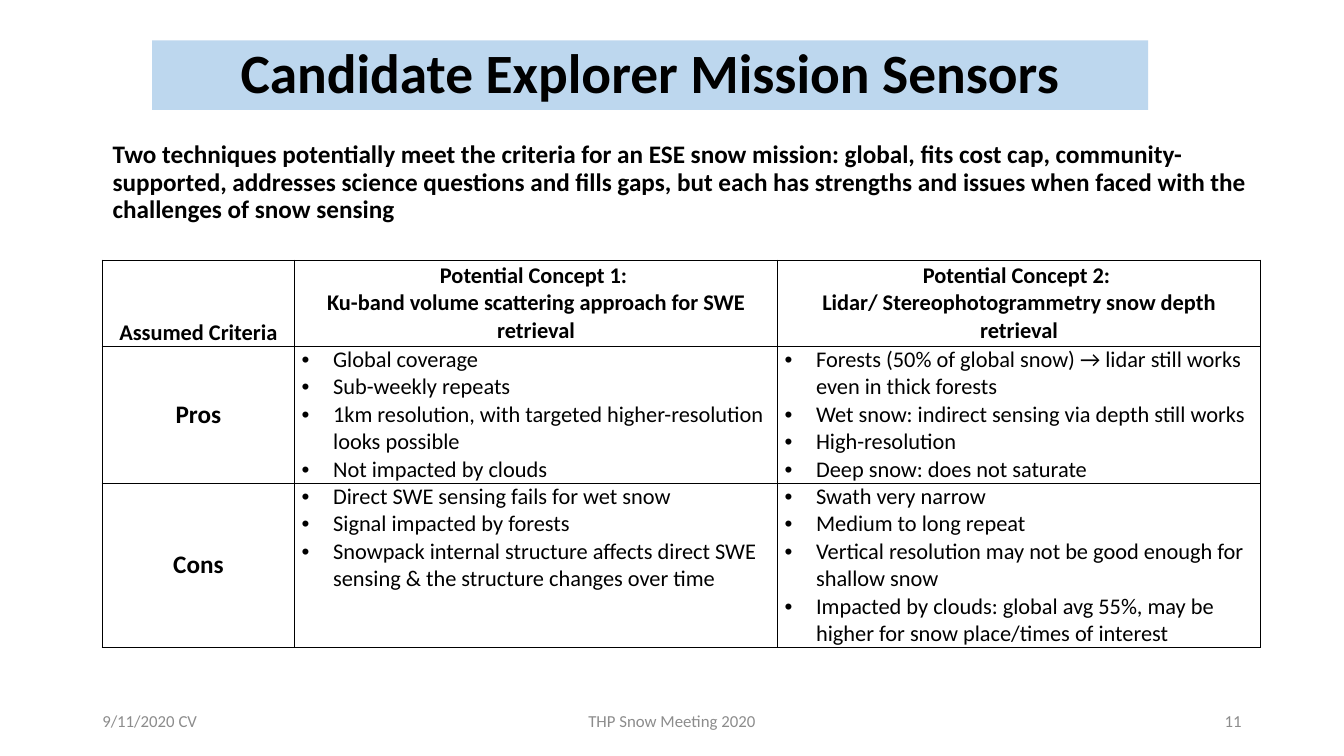
import pptx
import pptx.dml.color
import pptx.enum.shapes
import pptx.enum.text
import pptx.util
from lxml import etree

Pt = pptx.util.Pt
ALIGN = pptx.enum.text.PP_ALIGN
ANCHOR = pptx.enum.text.MSO_ANCHOR

TITLE = "Candidate Explorer Mission Sensors"
INTRO = (
    "Two techniques potentially meet the criteria for an ESE snow mission: global, "
    "fits cost cap, community-supported, addresses science questions and fills gaps, "
    "but each has strengths and issues when faced with the challenges of snow sensing"
)
HEADERS = [
    ["Assumed Criteria"],
    ["Potential Concept 1: ", "Ku-band volume scattering approach for SWE retrieval"],
    ["Potential Concept 2: ", "Lidar/ Stereophotogrammetry snow depth retrieval"],
]
CRITERIA = [
    ("Pros",
     ["Global coverage",
      "Sub-weekly repeats",
      "1km resolution, with targeted higher-resolution looks possible",
      "Not impacted by clouds"],
     ["Forests (50% of global snow) → lidar still works even in thick forests",
      "Wet snow: indirect sensing via depth still works",
      "High-resolution",
      "Deep snow: does not saturate"]),
    ("Cons",
     ["Direct SWE sensing fails for wet snow",
      "Signal impacted by forests",
      "Snowpack internal structure affects direct SWE sensing & the structure "
      "changes over time"],
     ["Swath very narrow",
      "Medium to long repeat",
      "Vertical resolution may not be good enough for shallow snow",
      "Impacted by clouds: global avg 55%, may be higher for snow place/times of interest"]),
]
# text, left, width, alignment
FOOTERS = [
    ("9/11/2020 CV", 66, 216, ALIGN.LEFT),
    ("THP Snow Meeting 2020", 318, 324, ALIGN.CENTER),
    ("11", 678, 216, ALIGN.RIGHT),
]
COL_WIDTHS = [137.5, 345, 345]
ROW_HEIGHTS = [61.5, 97.8, 117.2]
BULLET_INDENT = Pt(22.5)


def rgb(hex_color):
    return pptx.dml.color.RGBColor.from_string(hex_color)


def fill(obj, hex_color):
    obj.fill.solid()
    obj.fill.fore_color.rgb = rgb(hex_color)


def write(tf, lines, size, bold=False, align=ALIGN.LEFT, color="000000",
          anchor=ANCHOR.MIDDLE, spacing=None, bullets=False):
    """Put lines into a text frame, one paragraph each."""
    tf.word_wrap = True
    tf.vertical_anchor = anchor
    for i, line in enumerate(lines):
        p = tf.paragraphs[0] if i == 0 else tf.add_paragraph()
        p.text = line
        p.alignment = align
        if spacing:
            p.line_spacing = spacing
        if bullets:
            add_bullet(p)
        for r in p.runs:
            r.font.name = "Calibri"
            r.font.size = Pt(size)
            r.font.bold = bold
            r.font.color.rgb = rgb(color)


def add_bullet(p):
    pPr = p._p.get_or_add_pPr()
    pPr.set("marL", str(BULLET_INDENT))
    pPr.set("indent", str(-BULLET_INDENT))
    etree.SubElement(pPr, pptx.oxml.ns.qn("a:buFont"), typeface="Arial")
    etree.SubElement(pPr, pptx.oxml.ns.qn("a:buChar"), char="•")


def add_borders(cell):
    qn = pptx.oxml.ns.qn
    tcPr = cell._tc.get_or_add_tcPr()
    for i, side in enumerate(("lnL", "lnR", "lnT", "lnB")):
        ln = etree.Element(qn("a:" + side), w=str(Pt(1)))
        solid = etree.SubElement(ln, qn("a:solidFill"))
        etree.SubElement(solid, qn("a:srgbClr"), val="000000")
        tcPr.insert(i, ln)


def add_text(s, box, lines, size, **style):
    tb = s.shapes.add_textbox(*map(Pt, box))
    write(tb.text_frame, lines, size, **style)


def add_criteria_table(s):
    frame = s.shapes.add_table(len(ROW_HEIGHTS), len(COL_WIDTHS), Pt(73), Pt(185.8),
                               Pt(sum(COL_WIDTHS)), Pt(sum(ROW_HEIGHTS)))
    table = frame.table
    for column, width in zip(table.columns, COL_WIDTHS):
        column.width = Pt(width)
    for row, height in zip(table.rows, ROW_HEIGHTS):
        row.height = Pt(height)
    for cell in table.iter_cells():
        cell.margin_left = cell.margin_right = Pt(5)
        cell.margin_top = cell.margin_bottom = 0
        fill(cell, "FFFFFF")
        add_borders(cell)

    def write_cell(row, col, lines, size, anchor, **style):
        cell = table.cell(row, col)
        write(cell.text_frame, lines, size, anchor=None, **style)
        cell.vertical_anchor = anchor

    for col, lines in enumerate(HEADERS):
        write_cell(0, col, lines, 16, ANCHOR.MIDDLE if col else ANCHOR.BOTTOM,
                   bold=True, align=ALIGN.CENTER)
    for row, (label, *concepts) in enumerate(CRITERIA, start=1):
        write_cell(row, 0, [label], 18, ANCHOR.MIDDLE, bold=True, align=ALIGN.CENTER)
        for col, points in enumerate(concepts, start=1):
            write_cell(row, col, points, 16, ANCHOR.TOP, bullets=True)


def main():
    prs = pptx.Presentation()
    prs.slide_width, prs.slide_height = Pt(960), Pt(540)
    s = prs.slides.add_slide(prs.slide_layouts[6])

    add_text(s, (73.4, 98, 832.5, 81.5), [INTRO], 18, bold=True,
             anchor=ANCHOR.TOP, spacing=0.9)

    banner = s.shapes.add_shape(pptx.enum.shapes.MSO_SHAPE.RECTANGLE,
                                Pt(108.7), Pt(28.8), Pt(711.4), Pt(49.7))
    banner.shadow.inherit = False
    fill(banner, "BDD7EE")
    banner.line.fill.background()
    write(banner.text_frame, [TITLE], 39.6, bold=True, align=ALIGN.CENTER, spacing=0.9)

    add_criteria_table(s)
    for text, left, width, align in FOOTERS:
        add_text(s, (left, 500.5, width, 28.8), [text], 12, align=align, color="8C8C8C")
    prs.save("out.pptx")


if __name__ == "__main__":
    main()
